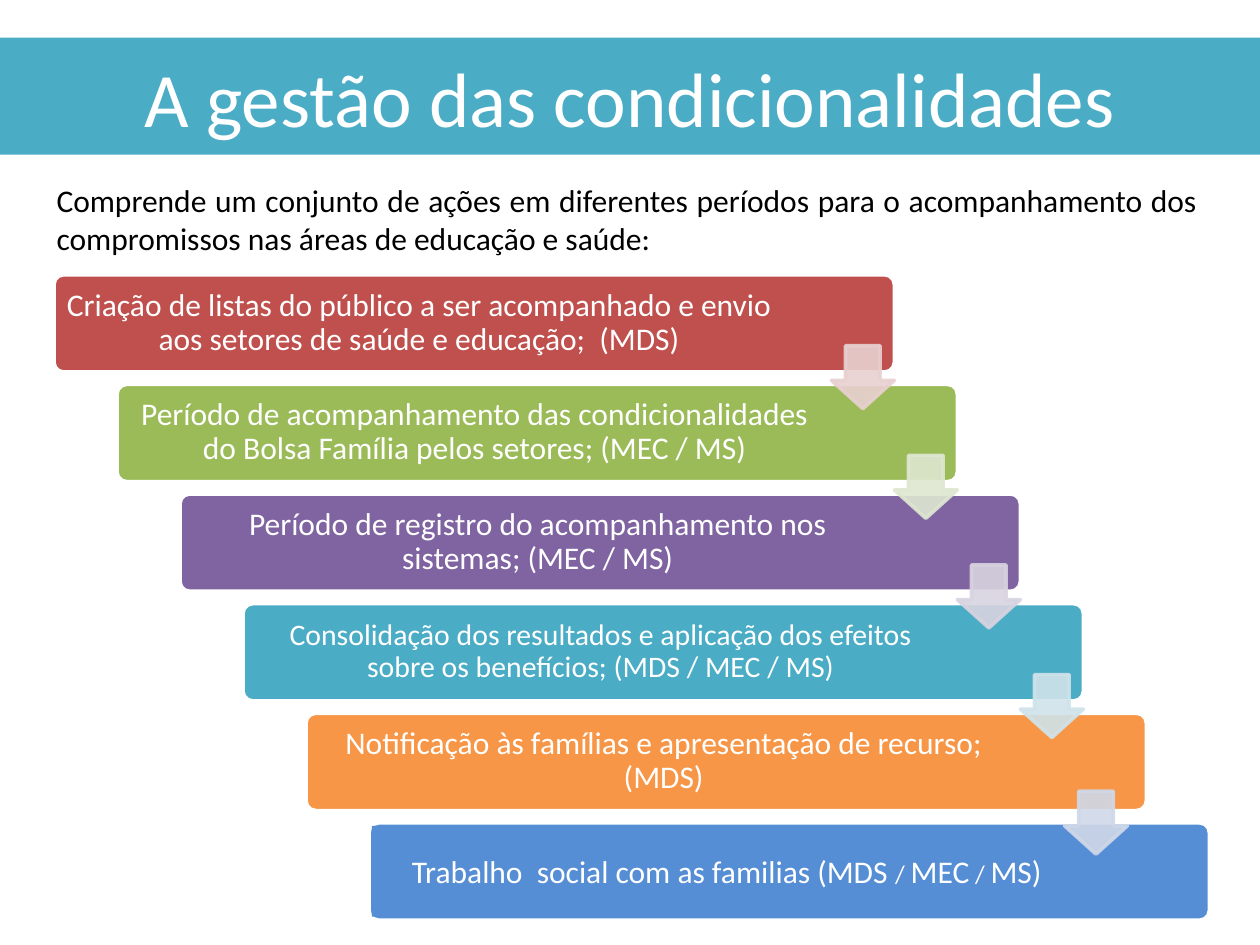
"""Build the slide with the six descending steps of managing conditionalities."""
from dataclasses import dataclass

from lxml.etree import SubElement
from pptx import Presentation
from pptx.dml.color import RGBColor
from pptx.enum.shapes import MSO_SHAPE
from pptx.enum.text import MSO_ANCHOR, PP_ALIGN
from pptx.oxml.ns import qn
from pptx.util import Cm, Pt

WHITE = "FFFFFF"
LEFT, TOP, DX, DY = 1.09, 5.54, 1.27, 2.21
BOX_W, BOX_H = 16.94, 1.96
ARROW_LEFT, ARROW_TOP, ARROW_SIZE = 16.76, 6.97, 1.27


@dataclass
class Step:
    runs: list[str]
    color: str
    size: int = 18
    text_width: float = 14.3
    spacing: float = 0.9
    text_fill: str | None = None


@dataclass
class Arrow:
    left: float
    top: float
    color: str


STEPS = [
    Step(["Criação de listas do público a ser acompanhado e envio aos setores "
          "de saúde e educação;  (MDS)"], "C0504D", text_width=14.6),
    Step(["Período de acompanhamento das condicionalidades do Bolsa Família "
          "pelos setores; (MEC / MS)"], "9BBB59"),
    Step(["Período de registro do acompanhamento nos sistemas; (MEC / MS)"], "8064A2"),
    Step(["Consolidação dos resultados e aplicação dos efeitos sobre os "
          "benefícios; (MDS / MEC / MS)"], "4BACC6", size=17),
    Step(["Notificação às famílias e apresentação de recurso; (MDS)"], "F79646"),
    Step(["Trabalho  social com as familias (MDS ", "/ MEC / MS", ")"], "558ED5",
         spacing=1.0, text_fill="558ED5"),
]
ARROWS = [
    Arrow(ARROW_LEFT + i * DX, ARROW_TOP + i * DY, color)
    for i, color in enumerate(["E8D0D0", "DEE7D1", "D8D3E0", "D0E3EA"])
] + [Arrow(21.46, 15.95, "D0D8E8")]


def rgb(color: str) -> RGBColor:
    return RGBColor.from_string(color)


def paint(sp, fill: str, line: str | None = None) -> None:
    sp.fill.solid()
    sp.fill.fore_color.rgb = rgb(fill)
    if line:
        sp.line.color.rgb = rgb(line)
        sp.line.width = Pt(2)


def format_text(p, size: int, color: str, align: PP_ALIGN) -> None:
    p.alignment = align
    for r in p.runs:
        r.font.size = Pt(size)
        r.font.name = "Calibri"
        r.font.color.rgb = rgb(color)


def add_title(s, text: str) -> None:
    sp = s.shapes.title
    sp.left, sp.top, sp.width, sp.height = Cm(0), Cm(0.76), Cm(25.4), Cm(2.36)
    paint(sp, "4BACC6")
    tf = sp.text_frame
    tf.text = text
    tf.vertical_anchor = MSO_ANCHOR.MIDDLE
    format_text(tf.paragraphs[0], 44, WHITE, PP_ALIGN.CENTER)


def add_intro(s, text: str) -> None:
    tf = s.shapes.add_textbox(Cm(0.89), Cm(3.53), Cm(23.5), Cm(1.8)).text_frame
    tf.word_wrap = True
    tf.text = text
    format_text(tf.paragraphs[0], 18, "000000", PP_ALIGN.JUSTIFY)


def add_step(s, index: int, step: Step) -> None:
    left, top = LEFT + index * DX, TOP + index * DY
    sp = s.shapes.add_shape(MSO_SHAPE.ROUNDED_RECTANGLE, Cm(left), Cm(top),
                            Cm(BOX_W), Cm(BOX_H))
    sp.adjustments[0] = 0.1
    sp.shadow.inherit = False
    paint(sp, step.color, WHITE)

    label = s.shapes.add_textbox(Cm(left + 0.06), Cm(top + 0.06),
                                 Cm(step.text_width), Cm(1.83))
    if step.text_fill:
        paint(label, step.text_fill)
    tf = label.text_frame
    tf.word_wrap = True
    tf.vertical_anchor = MSO_ANCHOR.MIDDLE
    tf.margin_left = tf.margin_right = tf.margin_top = tf.margin_bottom = Cm(0.18)
    p = tf.paragraphs[0]
    p.line_spacing = step.spacing
    for i, text in enumerate(step.runs):
        r = p.add_run()
        r.text = text
        if i == 1:
            r.font._element.set("cap", "small")
    format_text(p, step.size, WHITE, PP_ALIGN.CENTER)


def add_arrow(s, arrow: Arrow) -> None:
    sp = s.shapes.add_shape(MSO_SHAPE.DOWN_ARROW, Cm(arrow.left), Cm(arrow.top),
                            Cm(ARROW_SIZE), Cm(ARROW_SIZE))
    sp.adjustments[0], sp.adjustments[1] = 0.55, 0.45
    sp.shadow.inherit = False
    paint(sp, arrow.color, arrow.color)
    for color in sp._element.spPr.iter(qn("a:srgbClr")):
        SubElement(color, qn("a:alpha"), val="90000")


def main() -> None:
    prs = Presentation()
    prs.slide_width, prs.slide_height = Cm(25.4), Cm(19.05)
    s = prs.slides.add_slide(prs.slide_layouts[5])
    add_title(s, "A gestão das condicionalidades")
    add_intro(s, "Comprende um conjunto de ações em diferentes períodos para o "
                 "acompanhamento dos compromissos nas áreas de educação e saúde:")
    for i, step in enumerate(STEPS):
        add_step(s, i, step)
    for arrow in ARROWS:
        add_arrow(s, arrow)
    prs.save("out.pptx")


if __name__ == "__main__":
    main()
